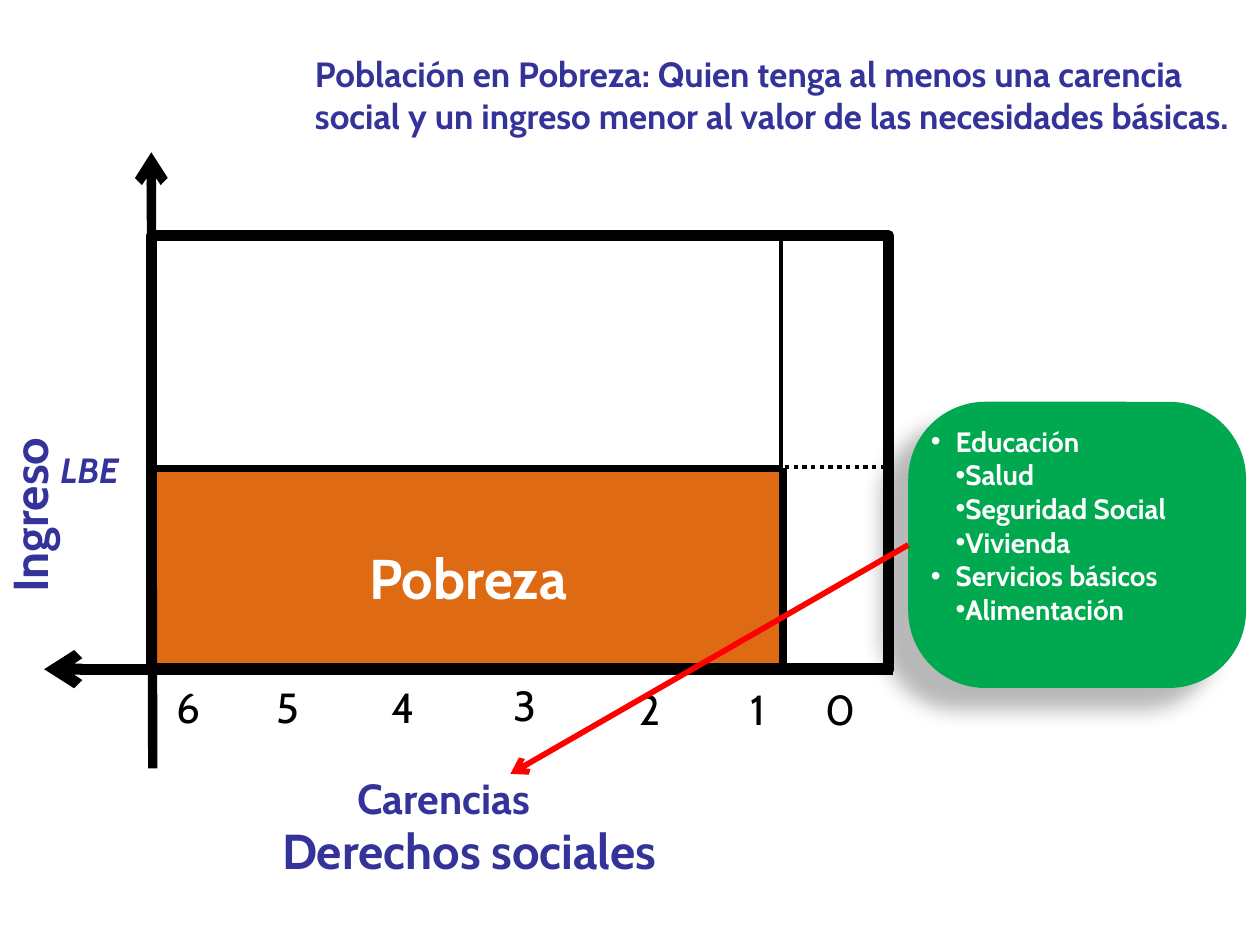
import pptx
import pptx.dml.color
import pptx.enum.dml
import pptx.enum.shapes
import pptx.enum.text
import pptx.oxml
import pptx.oxml.ns
import pptx.util
from dataclasses import dataclass

Cm, Pt = pptx.util.Cm, pptx.util.Pt
Color = pptx.dml.color.RGBColor.from_string
Shape = pptx.enum.shapes.MSO_SHAPE
Align, Anchor = pptx.enum.text.PP_ALIGN, pptx.enum.text.MSO_ANCHOR
qn = pptx.oxml.ns.qn
XMLNS = 'xmlns:a="http://schemas.openxmlformats.org/drawingml/2006/main"'


@dataclass(frozen=True)
class Theme:
    font: str = "Cabin"
    black: str = "000000"
    white: str = "FFFFFF"
    blue: str = "333399"
    orange: str = "DE6B14"
    green: str = "00A94F"
    red: str = "FF0000"
    region: int = 32
    heading: int = 28
    axis: int = 24
    note: int = 20
    listing: int = 16


THEME = Theme()
TIGHT = {"margin_left": 0, "margin_right": 0}


def set_all(target, values):
    for attribute, value in values.items():
        setattr(target, attribute, value)


def add_xml(parent, markup):
    element = pptx.oxml.parse_xml(markup)
    parent.append(element)
    return element


def style_text(paragraph, size, color, bold=True, italic=False):
    set_all(paragraph.font, {"name": THEME.font, "size": Pt(size),
                             "bold": bold, "italic": italic})
    paragraph.font.color.rgb = Color(color)


def add_label(slide, box, text, size, color=THEME.blue, bold=True,
              italic=False, align=Align.LEFT, **frame_format):
    label = slide.shapes.add_textbox(*map(Cm, box))
    set_all(label.text_frame, {"word_wrap": True, **frame_format})
    paragraph = label.text_frame.paragraphs[0]
    paragraph.text, paragraph.alignment = text, align
    style_text(paragraph, size, color, bold, italic)
    return label


def add_block(slide, kind, box, fill=None, border=None):
    block = slide.shapes.add_shape(kind, *map(Cm, box))
    block.shadow.inherit = False
    if fill:
        block.fill.solid()
        block.fill.fore_color.rgb = Color(fill)
    else:
        block.fill.background()
    if border:
        block.line.color.rgb = Color(THEME.black)
        block.line.width = Pt(border)
    else:
        block.line.fill.background()
    return block


def add_line(slide, start, end, width, color=THEME.black, arrow=False, dash=None):
    line = slide.shapes.add_connector(pptx.enum.shapes.MSO_CONNECTOR.STRAIGHT,
                                      *map(Cm, (*start, *end)))
    line.line.color.rgb = Color(color)
    line.line.width = Pt(width)
    if dash:
        line.line.dash_style = dash
    properties = line._element.spPr
    if arrow:
        add_xml(properties.find(qn("a:ln")), f'<a:tailEnd {XMLNS} type="arrow"/>')
    add_xml(properties, f"<a:effectLst {XMLNS}/>")
    return line


def add_poverty_plot(slide, left, top, width, height):
    """Income against deprivations, with the poverty region shaded."""
    divider, threshold = 12.7, 4.67

    def at(x, y):
        return left + x, top + y

    poverty = add_block(slide, Shape.RECTANGLE, (*at(0, threshold + 0.05), 12.78, 3.96),
                        THEME.orange, 2.25)
    poverty.text_frame.vertical_anchor = Anchor.TOP
    paragraph = poverty.text_frame.paragraphs[0]
    set_all(paragraph, {"text": "Pobreza", "alignment": Align.CENTER, "line_spacing": 2.0})
    style_text(paragraph, THEME.region, THEME.white)

    add_line(slide, at(0, threshold), at(divider, threshold), 2.5)
    add_line(slide, at(divider + 0.07, threshold), at(width - 0.1, threshold), 2.5,
             dash=pptx.enum.dml.MSO_LINE.ROUND_DOT)
    add_line(slide, at(width + 0.1, height), at(-2.16, height), 6.25, arrow=True)
    add_block(slide, Shape.RECTANGLE, (left, top, width, height), border=6.5)
    add_line(slide, at(divider, 0), at(divider, height), 2.5)
    add_line(slide, at(0.03, height + 2), at(0, -1.68), 5.35, arrow=True)

    count_centers = {"6": (0.75, 0.13), "5": (2.76, 0.13), "4": (5.07, 0.13),
                     "3": (7.54, 0.08), "2": (10.05, 0.16), "1": (12.23, 0.16),
                     "0": (13.89, 0.16)}
    count_width = 1.14
    for count, (center, drop) in count_centers.items():
        add_label(slide, (*at(center - count_width / 2, height + drop), count_width, 1.3),
                  count, THEME.axis, THEME.black, bold=False, align=Align.CENTER)


def add_axis_titles(slide, left, top):
    """Titles beside and below the plot whose top left corner is given."""
    centered = {**TIGHT, "word_wrap": False, "vertical_anchor": Anchor.MIDDLE,
                "align": Align.CENTER}
    add_label(slide, (left + 0.81, top + 11.96, 11.2, 0.86), "Derechos sociales",
              THEME.heading, **centered)
    add_label(slide, (left + 3.68, top + 10.82, 4.42, 1.02), "Carencias",
              THEME.axis, **centered)
    add_label(slide, (left - 2.08, top + 4.17, 2.24, 1.12), "LBE", THEME.note, italic=True)
    income = add_label(slide, (left - 6.68, top + 2.31, 8.41, 1.35), "Ingreso",
                       THEME.heading, **{**centered, "align": Align.LEFT})
    income.rotation = 270


def add_rights_list(slide, box):
    rights = add_block(slide, Shape.ROUNDED_RECTANGLE, box, THEME.green)
    rights.adjustments[0] = 0.27
    add_xml(rights._element.spPr.find(qn("a:effectLst")),
            f'<a:outerShdw {XMLNS} blurRad="{Pt(11.8)}" dist="{Pt(19.7)}" '
            f'dir="{141 * 60000}" algn="ctr" rotWithShape="0"><a:srgbClr val="{THEME.black}">'
            '<a:alpha val="28000"/></a:srgbClr></a:outerShdw>')
    frame = rights.text_frame
    set_all(frame, {**TIGHT, "margin_top": 0, "word_wrap": True,
                    "vertical_anchor": Anchor.TOP})
    main, nested = (0.5, -0.5), (0, 0.5)
    entries = [("Educación", main), ("Salud", nested), ("Seguridad Social", nested),
               ("Vivienda", nested), ("Servicios básicos", main), ("Alimentación", nested)]
    for index, (right, (margin, indent)) in enumerate(entries):
        paragraph = frame.add_paragraph() if index else frame.paragraphs[0]
        paragraph.text, paragraph.alignment = right, Align.LEFT
        properties = paragraph._p.get_or_add_pPr()
        properties.set("marL", str(Cm(margin)))
        properties.set("indent", str(Cm(indent)))
        add_xml(properties, f'<a:buFont {XMLNS} typeface="Arial"/>')
        add_xml(properties, f'<a:buChar {XMLNS} char="•"/>')
        style_text(paragraph, THEME.listing, THEME.white)
    return rights


def main():
    deck = pptx.Presentation()
    set_all(deck, {"slide_width": Cm(25.4), "slide_height": Cm(19.05)})
    slide = deck.slides.add_slide(deck.slide_layouts[6])

    plot_left, plot_top = 3.05, 4.75
    add_poverty_plot(slide, plot_left, plot_top, 14.86, 8.74)
    add_axis_titles(slide, plot_left, plot_top)
    add_label(slide, (6.1, 0.94, 19.3, 2.82),
              "Población en Pobreza: Quien tenga al menos una carencia social "
              "y un ingreso menor al valor de las necesidades básicas.", THEME.note)
    rights = add_rights_list(slide, (18.31, 8.1, 6.81, 5.77))
    pointer = add_line(slide, (18.31, 10.99), (10.29, 15.6), 3.25, THEME.red, arrow=True)
    pointer.begin_connect(rights, 1)

    deck.save("out.pptx")


if __name__ == "__main__":
    main()
